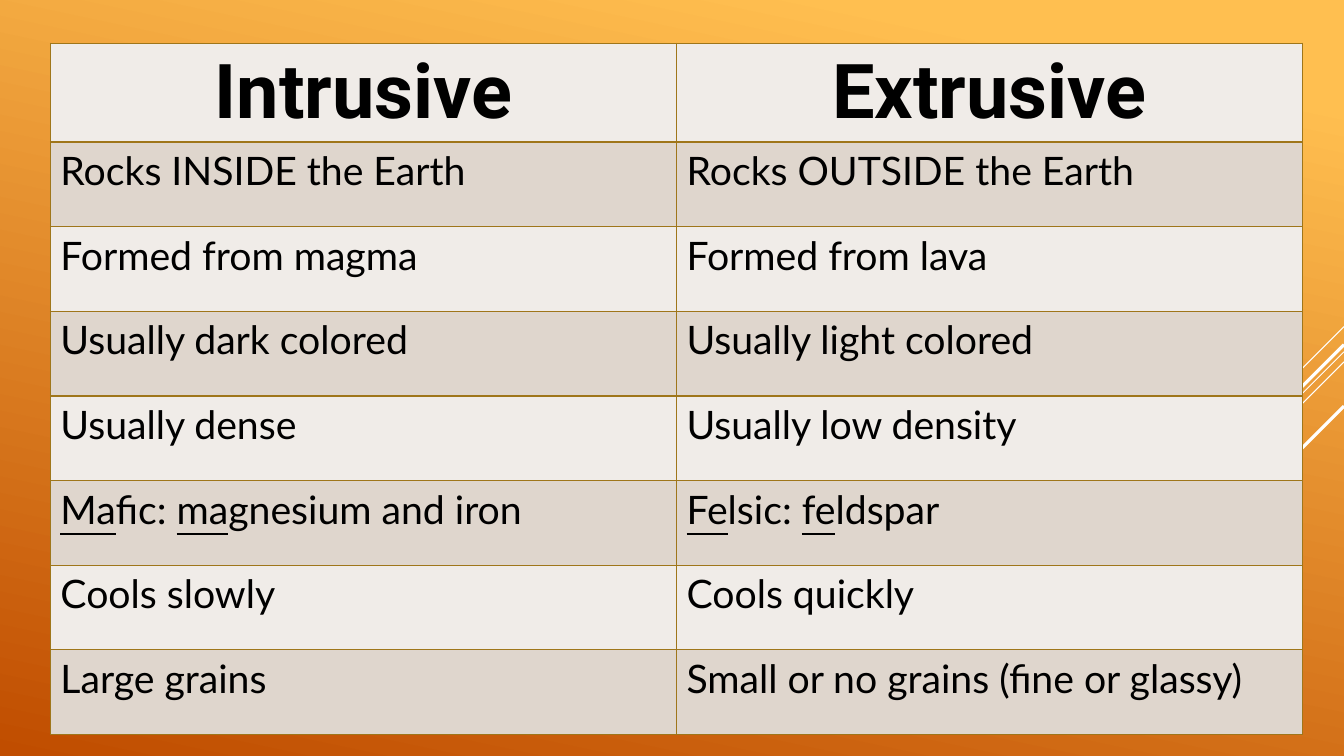
from dataclasses import dataclass

from lxml import etree
from pptx import Presentation
from pptx import util as u
from pptx.dml.color import RGBColor
from pptx.enum import shapes, text
from pptx.oxml import ns


@dataclass(frozen=True)
class Theme:
    """Colours, fonts and type sizes of the slide."""
    sky: str = "FFBF50"
    ember: str = "C04D00"
    stripe: str = "FFFFFF"
    border: str = "9F761A"
    ink: str = "000000"
    bands: tuple = ("F0ECE8", "DFD6CD")
    heading_font: str = "Roboto"
    body_font: str = "Lato"
    heading_size: int = 54
    body_size: int = 28


THEME = Theme()
WIDTH, HEIGHT = 13.33, 7.5
STRIPES = [(3.24, 1.0, 0.75), (3.49, 3.26, 0.75), (3.59, 2.08, 0.75),
           (3.42, 1.91, 2.25), (4.03, 1.39, 2.25)]
ROCKS = [
    ("Intrusive", "Extrusive"),
    ("Rocks INSIDE the Earth", "Rocks OUTSIDE the Earth"),
    ("Formed from magma", "Formed from lava"),
    ("Usually dark colored", "Usually light colored"),
    ("Usually dense", "Usually low density"),
    ("|Ma|fic: |ma|gnesium and iron", "|Fe|lsic: |fe|ldspar"),
    ("Cools slowly", "Cools quickly"),
    ("Large grains", "Small or no grains (fine or glassy)"),
]


def paint_background(page):
    """Fill the page with the slanted orange gradient."""
    fill = page.background.fill
    fill.gradient()
    fill.gradient_angle = 360 - 102
    for stop, place, color in zip(fill.gradient_stops, (0.1, 1.0), (THEME.sky, THEME.ember)):
        stop.position = place
        stop.color.rgb = RGBColor.from_string(color)


def add_stripe(page, top, reach, weight):
    """Draw a 45 degree stripe down and left from the right edge."""
    stripe = page.shapes.add_connector(
        shapes.MSO_CONNECTOR.STRAIGHT, u.Inches(WIDTH), u.Inches(top),
        u.Inches(WIDTH - reach), u.Inches(top + reach))
    stripe.line.color.rgb = RGBColor.from_string(THEME.stripe)
    stripe.line.width = u.Pt(weight)
    etree.SubElement(stripe._element.spPr, ns.qn("a:effectLst"))


def outline_cell(cell):
    """Give all four sides of a cell a thin border."""
    properties = cell._tc.get_or_add_tcPr()
    for side in ("lnL", "lnR", "lnT", "lnB"):
        line = etree.SubElement(properties, ns.qn(f"a:{side}"), w=str(u.Pt(1)))
        fill = etree.SubElement(line, ns.qn("a:solidFill"))
        etree.SubElement(fill, ns.qn("a:srgbClr"), val=THEME.border)


def write_cell(cell, wording, heading):
    """Write the wording, underlining every second part between bars."""
    para = cell.text_frame.paragraphs[0]
    if heading:
        para.alignment = text.PP_ALIGN.CENTER
    for index, part in enumerate(wording.split("|")):
        if not part:
            continue
        span = para.add_run()
        span.text = part
        span.font.name = THEME.heading_font if heading else THEME.body_font
        span.font.size = u.Pt(THEME.heading_size if heading else THEME.body_size)
        span.font.bold = heading
        span.font.underline = index % 2 == 1
        span.font.color.rgb = RGBColor.from_string(THEME.ink)


def add_comparison(page, rows, left, top, column_width, row_height):
    """Add the banded two-column comparison table."""
    columns = len(rows[0])
    table = page.shapes.add_table(
        len(rows), columns, u.Inches(left), u.Inches(top),
        u.Inches(column_width * columns), u.Inches(row_height * len(rows))).table
    table.first_row = table.horz_banding = False
    for row_index, row in enumerate(rows):
        for column_index, wording in enumerate(row):
            cell = table.cell(row_index, column_index)
            outline_cell(cell)
            cell.fill.solid()
            cell.fill.fore_color.rgb = RGBColor.from_string(THEME.bands[row_index % 2])
            write_cell(cell, wording, heading=row_index == 0)


def main():
    """Build the rock comparison slide and save it."""
    deck = Presentation()
    deck.slide_width, deck.slide_height = u.Inches(WIDTH), u.Inches(HEIGHT)
    page = deck.slides.add_slide(deck.slide_layouts[6])
    paint_background(page)
    for top, reach, weight in STRIPES:
        add_stripe(page, top, reach, weight)
    add_comparison(page, ROCKS, left=0.5, top=0.43, column_width=6.21, row_height=0.84)
    deck.save("out.pptx")


if __name__ == "__main__":
    main()
